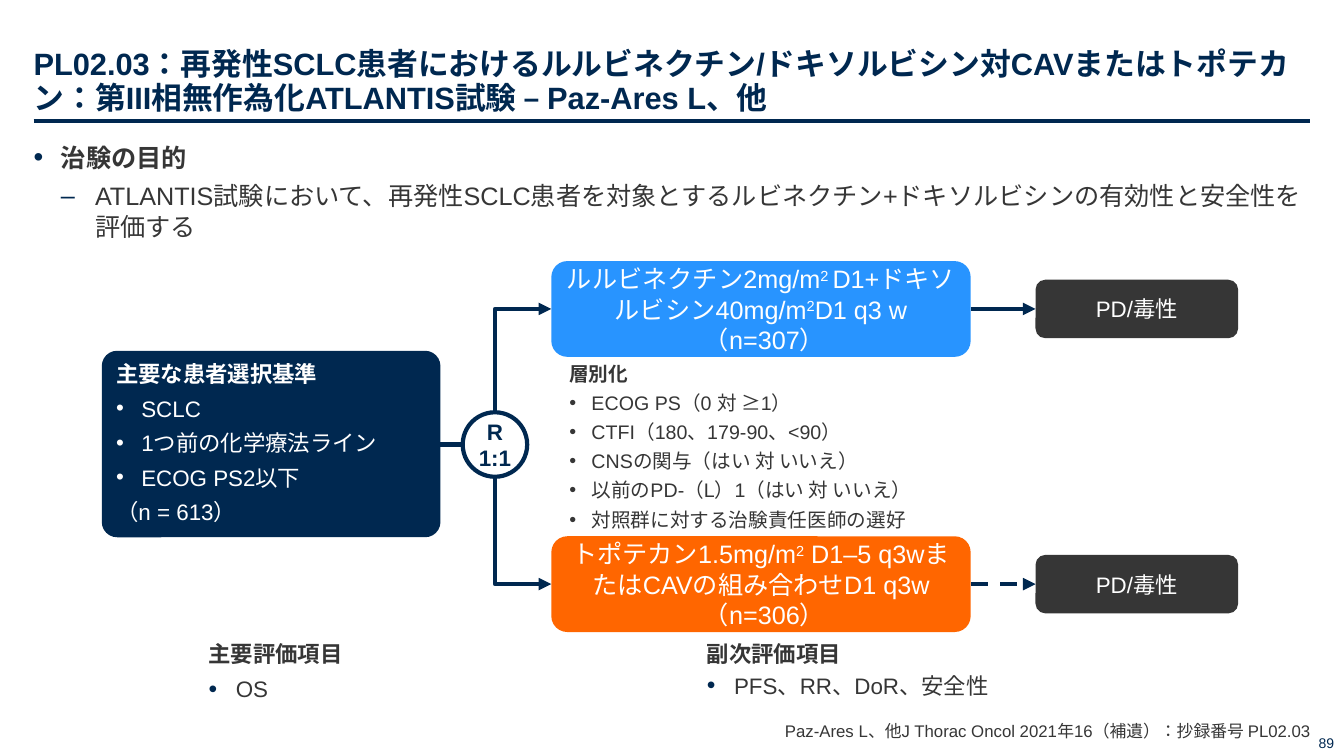
from lxml.etree import SubElement
from pptx import Presentation
from pptx.dml.color import RGBColor
from pptx.enum.dml import MSO_LINE_DASH_STYLE as Dash
from pptx.enum.lang import MSO_LANGUAGE_ID as Language
from pptx.enum.shapes import MSO_AUTO_SHAPE_TYPE as Form, MSO_CONNECTOR_TYPE as Link
from pptx.enum.text import MSO_ANCHOR as Anchor, MSO_AUTO_SIZE as AutoSize, PP_ALIGN as Align
from pptx.oxml.ns import qn
from pptx.util import Inches, Pt

COLORS = {"navy": "002850", "text": "363636", "white": "FFFFFF", "blue": "2894FF", "orange": "FF6600"}
COLUMNS, ROWS = 40, 30


def color(name):
    return RGBColor.from_string(COLORS[name])


class TrialSlide:
    font = "Arial"

    def __init__(self, presentation):
        self.column = presentation.slide_width / COLUMNS
        self.row = presentation.slide_height / ROWS
        self.slide = presentation.slides.add_slide(presentation.slide_layouts[5])
        self.shapes = self.slide.shapes

    def box(self, left, top, width, height):
        return (round(left * self.column), round(top * self.row),
                round(width * self.column), round(height * self.row))

    def frame(self, shape, anchor=Anchor.TOP, insets=(0.1, 0.05, 0.1, 0.05), wrap=True):
        frame = shape.text_frame
        frame.auto_size = AutoSize.NONE
        frame.word_wrap = wrap
        frame.vertical_anchor = anchor
        frame.margin_left, frame.margin_top, frame.margin_right, frame.margin_bottom = map(Inches, insets)
        return frame

    def format(self, paragraph, size, ink="text", bold=False, align=Align.LEFT, before=0, after=0):
        paragraph.alignment = align
        paragraph.space_before, paragraph.space_after = Pt(before), Pt(after)
        for run in paragraph.runs:
            font = run.font
            font.name, font.size, font.bold = self.font, Pt(size), bold
            font.color.rgb = color(ink)
            font.language_id = Language.JAPANESE

    def bullet(self, paragraph, indent, ink, hanging=None, symbol="•", percent=100):
        properties = paragraph._p.get_or_add_pPr()
        properties.set("marL", str(Inches(indent)))
        properties.set("indent", str(-Inches(hanging or indent)))
        SubElement(SubElement(properties, qn("a:buClr")), qn("a:srgbClr"), val=COLORS[ink])
        SubElement(properties, qn("a:buSzPct"), val=str(percent * 1000))
        SubElement(properties, qn("a:buFont"), typeface=self.font)
        SubElement(properties, qn("a:buChar"), char=symbol)

    def title(self, text, *place):
        shape = self.shapes.title
        shape.left, shape.top, shape.width, shape.height = self.box(*place)
        frame = self.frame(shape, Anchor.BOTTOM, (0, 0.05, 0, 0))
        frame.text = text
        frame.paragraphs[0].line_spacing = 0.9
        self.format(frame.paragraphs[0], 22, "navy", bold=True)

    def text(self, *place, **layout):
        return self.frame(self.shapes.add_textbox(*self.box(*place)), **layout)

    def note(self, text, place, size, ink, insets):
        frame = self.text(*place, anchor=Anchor.BOTTOM, insets=insets)
        frame.text = text
        self.format(frame.paragraphs[0], size, ink, align=Align.RIGHT)

    def block(self, form, place, fill=None, corner=None, **layout):
        shape = self.shapes.add_shape(form, *self.box(*place))
        shape.shadow.inherit = False
        if fill:
            shape.fill.solid()
            shape.fill.fore_color.rgb = color(fill)
            shape.line.fill.background()
        else:
            shape.fill.background()
            shape.line.color.rgb = color("navy")
            shape.line.width = Pt(3)
        if corner:
            shape.adjustments[0] = corner
        return self.frame(shape, **layout)

    def card(self, place, fill, size, pieces, group=None):
        frame = self.block(Form.ROUNDED_RECTANGLE, place, fill, 0.167,
                           anchor=Anchor.MIDDLE, insets=(0.1, 0, 0.1, 0))
        paragraph = frame.paragraphs[0]
        paragraph.text = pieces[0]
        for index, piece in enumerate(pieces[1:]):
            run = paragraph.add_run()
            run.text = piece
            if index % 2 == 0:
                run._r.get_or_add_rPr().set("baseline", "30000")
        if group:
            paragraph.add_line_break()
            paragraph.add_run().text = group
        self.format(paragraph, size, "white", align=Align.CENTER)

    def listing(self, frame, heading, items, size, indent, ink="text", mark="text",
                percent=100, closing=None, **spacing):
        frame.text = heading
        self.format(frame.paragraphs[0], size, ink, bold=True, **spacing)
        for item in items:
            paragraph = frame.add_paragraph()
            paragraph.text = item
            self.format(paragraph, size, ink, **spacing)
            self.bullet(paragraph, indent, mark, percent=percent)
        if closing:
            paragraph = frame.add_paragraph()
            paragraph.text = closing
            self.format(paragraph, size, ink, **spacing)

    def line(self, start, end, width=3, head=None, dashed=False, bent=False):
        ends = self.box(*start, *end)
        connector = self.shapes.add_connector(Link.ELBOW if bent else Link.STRAIGHT, *ends)
        connector.line.color.rgb = color("navy")
        connector.line.width = Pt(width)
        if dashed:
            connector.line.dash_style = Dash.DASH
        properties = connector._element.spPr
        if bent:
            properties.find(qn("a:prstGeom")).set("prst", "bentConnector2")
        if head:
            SubElement(connector.line._get_or_add_ln(), qn(f"a:{head}"), type="triangle")
        SubElement(properties, qn("a:effectLst"))


def main():
    presentation = Presentation()
    presentation.slide_width, presentation.slide_height = Inches(13.33), Inches(7.5)
    page = TrialSlide(presentation)

    page.title("PL02.03：再発性SCLC患者におけるルルビネクチン/ドキソルビシン対CAVまたはトポテカン："
               "第III相無作為化ATLANTIS試験 – Paz-Ares L、他", 1, 0.48, 38.59, 4.12)
    page.line((1, 4.8), (39, 4.8), width=2.25)
    page.note("89", (38.05, 28.4, 1.95, 1.6), 10, "navy", (0.1, 0.05, 0.1, 0.05))
    page.note("Paz-Ares L、他J Thorac Oncol 2021年16（補遺）：抄録番号 PL02.03",
              (20.94, 28.52, 18.06, 0.88), 12, "text", (0, 0, 0, 0))

    aim = page.text(1, 5.44, 38, 4.5, insets=(0, 0.05, 0, 0.05))
    page.listing(aim, "治験の目的", [], 18, 0.27, after=6)
    page.bullet(aim.paragraphs[0], 0.27, "navy", percent=110)
    goal = aim.add_paragraph()
    goal.text = ("ATLANTIS試験において、再発性SCLC患者を対象とする"
                 "ルビネクチン+ドキソルビシンの有効性と安全性を評価する")
    goal.level = 1
    page.format(goal, 18, after=6)
    page.bullet(goal, 0.61, "navy", hanging=0.34, symbol="–")

    hub, arm_left, arm_width, arm_height = 14.73, 16.41, 12.48, 3.8
    outcome_left, outcome_height = 30.82, 2.32
    arms = [
        (12.26, 16.36, "blue", False,
         ["ルルビネクチン2mg/m", "2 ", "D1+ドキソルビシン40mg/m", "2", "D1 q3 w"], " （n=307）"),
        (23.18, 18.92, "orange", True,
         ["トポテカン1.5mg/m", "2", " D1–5 q3wまたはCAVの組み合わせD1 q3w"], " （n=306）"),
    ]
    for middle, hub_edge, fill, dashed, dose, group in arms:
        page.line((arm_left, middle), (hub, hub_edge), head="headEnd", bent=True)
        page.line((arm_left + arm_width, middle), (outcome_left, middle), head="tailEnd", dashed=dashed)
        page.card((arm_left, middle - arm_height / 2, arm_width, arm_height), fill, 18, dose, group)
        page.card((outcome_left, middle - outcome_height / 2, 6.03, outcome_height),
                  "text", 16, ["PD/毒性"])

    criteria = page.block(Form.ROUNDED_RECTANGLE, (3.03, 13.92, 10.08, 7.4), "navy", 0.082)
    page.listing(criteria, "主要な患者選択基準", ["SCLC", "1つ前の化学療法ライン", "ECOG PS2以下"],
                 16, 0.25, "white", "white", closing="（n = 613）", after=5.5)
    page.line((13.11, 17.64), (13.77, 17.64))
    ratio = page.block(Form.OVAL, (13.77, 16.36, 1.92, 2.56), anchor=Anchor.MIDDLE, wrap=False)
    ratio.paragraphs[0].text = "R\v1:1"
    page.format(ratio.paragraphs[0], 16, "navy", bold=True, align=Align.CENTER)

    strata = ["ECOG PS（0 対 ≥1）", "CTFI（180、179-90、<90）", "CNSの関与（はい 対 いいえ）",
              "以前のPD-（L）1（はい 対 いいえ）", "対照群に対する治験責任医師の選好"]
    page.listing(page.text(16.65, 14.16, 14.07, 3.92), "層別化", strata, 14, 0.22, after=4)

    endpoints = [
        (6.21, 0, "主要評価項目", "OS", {"after": 6}),
        (20.74, 0.1, "副次評価項目", "PFS、RR、DoR、安全性", {"before": 3.7}),
    ]
    for left, inset, heading, measure, spacing in endpoints:
        frame = page.text(left, 25.2, 14.01, 4.48, insets=(inset, 0.05, inset, 0.05))
        page.listing(frame, heading, [measure], 16, 0.27, mark="navy", percent=110, **spacing)

    presentation.save("out.pptx")


if __name__ == "__main__":
    main()
